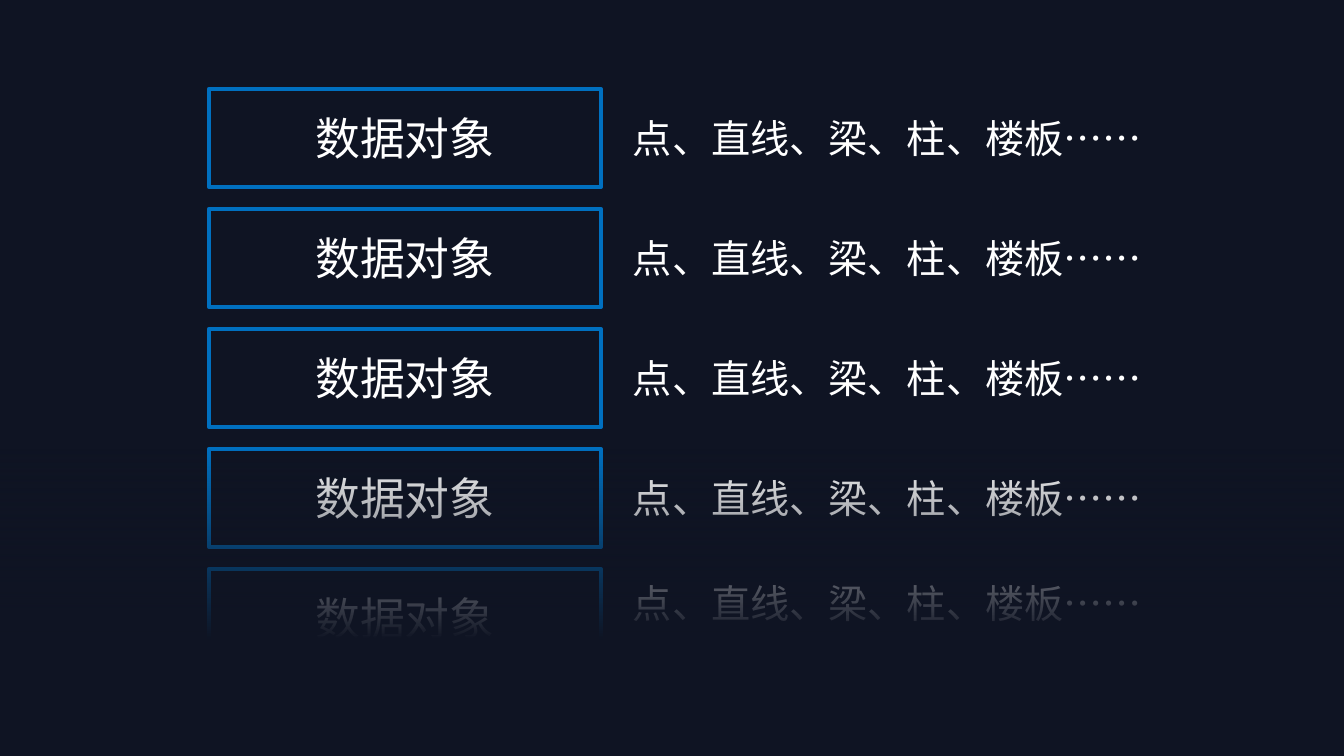
"""Builds a slide of data object rows that fade into the dark background."""
from dataclasses import dataclass

from lxml import etree
from pptx import Presentation
from pptx import util as u
from pptx.dml.color import RGBColor
from pptx.enum import shapes, text
from pptx.oxml.ns import qn

SCALE = 914400 / 100.8
WIDTH, HEIGHT = 1344, 756
ROWS = 5
ROW_TOP, ROW_PITCH, ROW_HEIGHT = 89, 120, 98
FADE_TOP = 450


def px(length):
    return u.Emu(round(length * SCALE))


@dataclass(frozen=True)
class Theme:
    background: RGBColor = RGBColor(0x0F, 0x14, 0x23)
    border: RGBColor = RGBColor(0x00, 0x70, 0xC0)
    ink: RGBColor = RGBColor(0xFF, 0xFF, 0xFF)
    label_font: str = "Noto Sans CJK SC"
    detail_font: str = "Noto Sans CJK JP"
    label_size: int = 32
    detail_size: int = 28
    border_width: int = 3


class Painter:
    def __init__(self, page, theme):
        self.page = page
        self.theme = theme
        page.background.fill.solid()
        page.background.fill.fore_color.rgb = theme.background

    def set_words(self, frame, words, name, size):
        frame.word_wrap = True
        para = frame.paragraphs[0]
        para.add_run().text = words
        para.font.name = name
        para.font.size = u.Pt(size)
        para.font.color.rgb = self.theme.ink
        properties = para._p.pPr.find(qn("a:defRPr"))
        etree.SubElement(properties, qn("a:ea"), typeface=name)
        return para

    def rectangle(self, left, top, width, height):
        box = self.page.shapes.add_shape(
            shapes.MSO_SHAPE.RECTANGLE, px(left), px(top), px(width), px(height))
        box.shadow.inherit = False
        return box

    def label(self, left, top, width, height, words):
        box = self.rectangle(left, top, width, height)
        box.fill.background()
        box.line.color.rgb = self.theme.border
        box.line.width = u.Pt(self.theme.border_width)
        box.text_frame.vertical_anchor = text.MSO_ANCHOR.MIDDLE
        para = self.set_words(box.text_frame, words,
                              self.theme.label_font, self.theme.label_size)
        para.alignment = text.PP_ALIGN.CENTER

    def detail(self, left, top, width, height, words):
        box = self.page.shapes.add_textbox(px(left), px(top), px(width), px(height))
        self.set_words(box.text_frame, words,
                       self.theme.detail_font, self.theme.detail_size)
        box.text_frame.auto_size = text.MSO_AUTO_SIZE.SHAPE_TO_FIT_TEXT

    def fade(self, left, top, width, height, opaque_from):
        veil = self.rectangle(left, top, width, height)
        veil.line.fill.background()
        veil.fill.gradient()
        veil.fill.gradient_angle = 270
        for stop, position in zip(veil.fill.gradient_stops, (0, opaque_from)):
            stop.color.rgb = self.theme.background
            stop.position = position
        clear = veil._element.spPr.find(".//" + qn("a:srgbClr"))
        etree.SubElement(clear, qn("a:alpha"), val="0")


def main():
    deck = Presentation()
    deck.slide_width, deck.slide_height = px(WIDTH), px(HEIGHT)
    painter = Painter(deck.slides.add_slide(deck.slide_layouts[6]), Theme())
    for row in range(ROWS):
        top = ROW_TOP + row * ROW_PITCH
        detail_shift = 5 if row == ROWS - 1 else 20
        painter.label(209, top, 392, ROW_HEIGHT, "数据对象")
        painter.detail(623, top + detail_shift, 573, 57, "点、直线、梁、柱、楼板……")
    painter.fade(0, FADE_TOP, WIDTH, HEIGHT - FADE_TOP, 0.62)
    deck.save("out.pptx")


if __name__ == "__main__":
    main()
